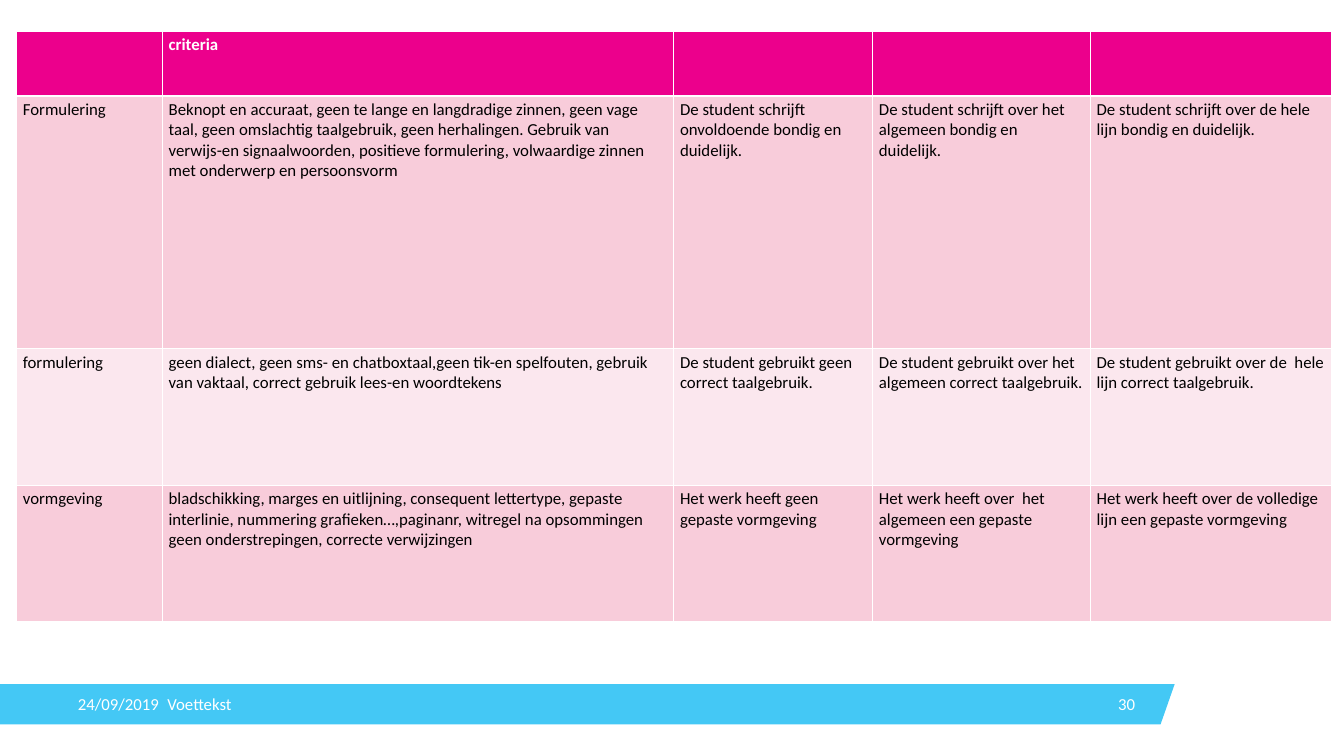
import pptx
import pptx.dml.color
import pptx.enum.text
import pptx.oxml
import pptx.oxml.ns
import pptx.util
from pptx.util import Inches

FONT = "Calibri"
HUES = {"head": "EC008C", "dark": "F8CCDA", "light": "FBE7EE",
        "bar": "44C8F5", "white": "FFFFFF", "black": "000000"}
ALIGN = pptx.enum.text.PP_ALIGN

# Table content and grid
COLS = [2.17, 7.61, 2.96, 3.24, 3.59]
ROWS = [0.96, 3.76, 2.03, 2.03]
CELLS = [
    ["", "criteria", "", "", ""],
    ["Formulering",
     "Beknopt en accuraat, geen te lange en langdradige zinnen, geen vage taal, "
     "geen omslachtig taalgebruik, geen herhalingen. Gebruik van verwijs-en "
     "signaalwoorden, positieve formulering, volwaardige zinnen met onderwerp "
     "en persoonsvorm",
     "De student schrijft onvoldoende bondig en duidelijk.",
     "De student schrijft over het algemeen bondig en duidelijk.",
     "De student schrijft over de hele lijn bondig en duidelijk."],
    ["formulering",
     "geen dialect, geen sms- en chatboxtaal,geen tik-en spelfouten, gebruik "
     "van vaktaal, correct gebruik lees-en woordtekens",
     "De student gebruikt geen correct taalgebruik.",
     "De student gebruikt over het algemeen correct taalgebruik.",
     "De student gebruikt over de  hele lijn correct taalgebruik."],
    ["vormgeving",
     "bladschikking, marges en uitlijning, consequent lettertype, gepaste "
     "interlinie, nummering grafieken…,paginanr, witregel na opsommingen geen "
     "onderstrepingen, correcte verwijzingen",
     "Het werk heeft geen gepaste vormgeving",
     "Het werk heeft over  het algemeen een gepaste vormgeving",
     "Het werk heeft over de volledige lijn een gepaste vormgeving"],
]


def color(name):
    return pptx.dml.color.RGBColor.from_string(HUES[name])


def add_run(para, text, hue, bold=False):
    run = para.add_run()
    run.text = text
    run.font.name = FONT
    run.font.size = pptx.util.Pt(18)
    run.font.bold = bold
    run.font.color.rgb = color(hue)


def add_bar(slide):
    edge = [(17.48, 10.18), (17.27, 10.78), (-0.01, 10.78)]
    pen = slide.shapes.build_freeform(Inches(-0.01), Inches(10.18))
    pen.add_line_segments([(Inches(x), Inches(y)) for x, y in edge], close=True)
    bar = pen.convert_to_shape()
    bar.shadow.inherit = False
    bar.fill.solid()
    bar.fill.fore_color.rgb = color("bar")
    bar.line.fill.background()


def add_label(slide, text, left, width, align=ALIGN.LEFT, inset=0):
    box = slide.shapes.add_textbox(
        Inches(left), Inches(10.18), Inches(width), Inches(0.6))
    frame = box.text_frame
    frame.word_wrap = True
    frame.vertical_anchor = pptx.enum.text.MSO_ANCHOR.MIDDLE
    frame.margin_left = frame.margin_right = Inches(inset)
    frame.margin_top = frame.margin_bottom = 0
    para = frame.paragraphs[0]
    para.alignment = align
    add_run(para, text, "white")


def add_edges(cell, row):
    # The rule under the header row is thicker than the others
    thick = {"T": row == 1, "B": row == 0}
    for side in "LRTB":
        width = pptx.util.Pt(3 if thick.get(side) else 1)
        cell._tc.get_or_add_tcPr().append(pptx.oxml.parse_xml(
            f'<a:ln{side} {pptx.oxml.ns.nsdecls("a")} w="{width}"><a:solidFill>'
            f'<a:srgbClr val="{HUES["white"]}"/></a:solidFill></a:ln{side}>'))


def add_grid(slide):
    frame = slide.shapes.add_table(
        len(ROWS), len(COLS), Inches(0.24), Inches(0.47),
        Inches(sum(COLS)), Inches(sum(ROWS)))
    grid = frame.table
    for col, width in zip(grid.columns, COLS):
        col.width = Inches(width)
    for row, height in zip(grid.rows, ROWS):
        row.height = Inches(height)
    for r, texts in enumerate(CELLS):
        head = r == 0
        fill = "head" if head else "dark" if r % 2 else "light"
        for c, text in enumerate(texts):
            cell = grid.cell(r, c)
            add_edges(cell, r)
            cell.fill.solid()
            cell.fill.fore_color.rgb = color(fill)
            if text:
                add_run(cell.text_frame.paragraphs[0], text,
                        "white" if head else "black", head)


def main():
    deck = pptx.Presentation()
    deck.slide_width = Inches(20)
    deck.slide_height = Inches(11.25)
    slide = deck.slides.add_slide(deck.slide_layouts[6])

    # Footer
    add_bar(slide)
    add_label(slide, "30", 15.9, 1.09, ALIGN.RIGHT, 0.1)
    add_label(slide, "24/09/2019", 1.16, 1.33)
    add_label(slide, "Voettekst", 2.49, 6.75)

    # Criteria table
    add_grid(slide)
    deck.save("out.pptx")


if __name__ == "__main__":
    main()
